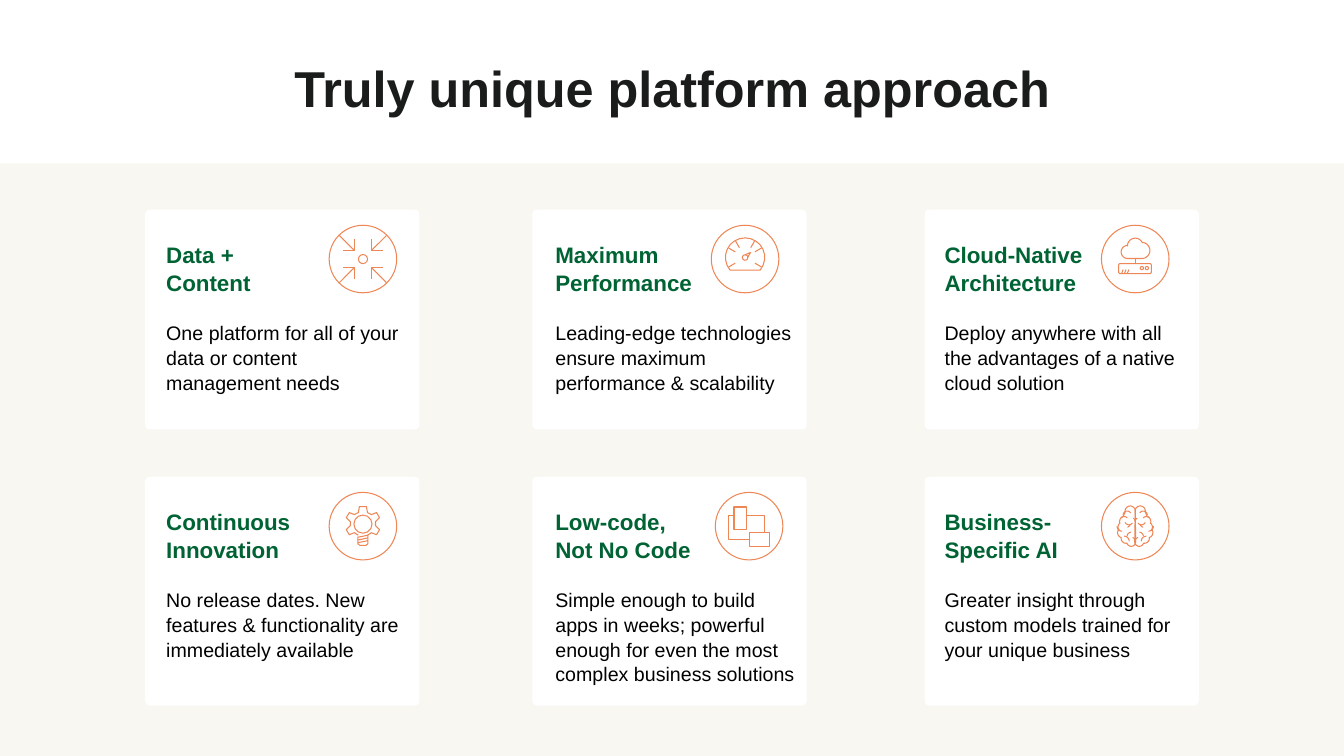
from math import cos, radians, sin

from pptx import Presentation
from pptx.dml.color import RGBColor
from pptx.enum.shapes import MSO_SHAPE
from pptx.enum.text import MSO_ANCHOR, PP_ALIGN
from pptx.util import Inches, Pt

RECT, ROUND, OVAL = MSO_SHAPE.RECTANGLE, MSO_SHAPE.ROUNDED_RECTANGLE, MSO_SHAPE.OVAL
MIDDLE, CENTER = MSO_ANCHOR.MIDDLE, PP_ALIGN.CENTER
WHITE, CREAM, ORANGE = "FFFFFF", "F8F7F2", "EE8655"
INK, GREEN, BLACK = "191C1A", "006334", "000000"


def paint(shape, fill=None, line=None):
    shape.shadow.inherit = False
    if fill:
        shape.fill.solid()
        shape.fill.fore_color.rgb = RGBColor.from_string(fill)
    else:
        shape.fill.background()
    if line:
        shape.line.color.rgb = RGBColor.from_string(line)
        shape.line.width = Pt(0.75)
    else:
        shape.line.fill.background()


def arc(x, y, radius, start, end):
    """Points along an arc, with angles in degrees clockwise from the right."""
    steps = 16
    angles = [radians(start + (end - start) * i / steps) for i in range(steps + 1)]
    return [(x + radius * cos(a), y + radius * sin(a)) for a in angles]


# Icons: strokes and (kind, left, top, width, height) parts,
# in thousandths of an inch from the centre of the ring.
arrows = []
for sx in (-1, 1):
    for sy in (-1, 1):
        arrows.append([(235 * sx, 235 * sy), (85 * sx, 85 * sy)])
        arrows.append([(85 * sx, 200 * sy), (85 * sx, 85 * sy), (200 * sx, 85 * sy)])
arrow_parts = [(OVAL, -45, -45, 90, 90)]

dial = arc(0, -15, 195, 140, 400)
gauge = [dial + dial[:1], [(25, -15), (55, -65), (0, -42)]]
for angle in (150, 210, 240, 300, 330, 390):
    gauge.append([(r * cos(radians(angle)), r * sin(radians(angle)) - 15) for r in (112, 188)])
gauge_parts = [(OVAL, -27, -42, 54, 54)]

outline = arc(-75, -70, 65, 90, 265) + arc(0, -130, 77, 180, 335) + arc(65, -85, 80, 280, 450)
cloud = [outline + outline[:1], [(0, -5), (0, 45)]]
cloud += [[(x, 105), (x - 15, 145)] for x in (-120, -92, -64)]
cloud_parts = [(ROUND, -165, 45, 325, 100), (OVAL, 49, 74, 32, 32), (OVAL, 99, 74, 32, 32)]

half_gear = [(-45, 90), (-85, 65), (-135, 85), (-165, 35), (-125, -5), (-125, -45),
             (-165, -85), (-135, -135), (-85, -115), (-45, -135), (-35, -195)]
bulb = [half_gear + [(-x, y) for x, y in reversed(half_gear)],
        [(-50, 105), (-50, 175), (-30, 190), (30, 190), (50, 175), (50, 90)]]
bulb += [[(-50, y), (50, y - 20)] for y in (110, 137, 164)]
bulb_parts = [(OVAL, -90, -110, 180, 180)]

window_parts = [(RECT, -200, -110, 350, 240), (RECT, -150, -190, 120, 220),
                (RECT, 0, 60, 200, 140)]

lobes = [(50, -150, 50, 180, 370), (100, -45, 55, -70, 20), (115, 10, 55, -45, 40),
         (125, 65, 50, -40, 70), (90, 120, 50, -10, 100), (40, 155, 45, 20, 175)]
folds = [(110, 150, 50, 180, 270), (40, 150, 40, 180, 250), (40, -45, 40, 180, 240),
         (40, 100, 40, 270, 360), (130, 0, 50, 0, 90), (110, -55, 40, 220, 320),
         (62, -55, 42, 25, 145), (85, -25, 36, 100, 160), (80, -110, 40, 210, 360)]
half_brain = [[point for lobe in lobes for point in arc(*lobe)] + [(0, -150)]]
half_brain += [arc(*fold) for fold in folds]
brain = half_brain + [[(-x, y) for x, y in stroke] for stroke in half_brain]

# Each card: heading, message, ring centre, icon strokes, icon parts
card_rows = [
    [("Data +\nContent",
      "One platform for all of your data or content management needs",
      3.6, arrows, arrow_parts),
     ("Maximum\nPerformance",
      "Leading-edge technologies ensure maximum performance & scalability",
      7.39, gauge, gauge_parts),
     ("Cloud-Native\nArchitecture",
      "Deploy anywhere with all the advantages of a native cloud solution",
      11.26, cloud, cloud_parts)],
    [("Continuous\nInnovation",
      "No release dates. New features & functionality are immediately available",
      3.6, bulb, bulb_parts),
     ("Low-code,\nNot No Code",
      "Simple enough to build\napps in weeks; powerful enough for even the most "
      "complex business solutions",
      7.43, [], window_parts),
     ("Business-\nSpecific AI",
      "Greater insight through custom models trained for your unique business",
      11.26, brain, [])],
]
columns = [(1.44, 1.55, 2.52), (5.28, 5.41, 2.65), (9.17, 9.27, 2.55)]
rows = [(2.08, 2.18), (4.73, 2.27)]
RING = 0.67

prs = Presentation()
prs.slide_width, prs.slide_height = Inches(13.33), Inches(7.5)
slide = prs.slides.add_slide(prs.slide_layouts[5])
shapes = slide.shapes

title = shapes.title
placement = {"left": 0.42, "top": 0.5, "width": 12.5, "height": 0.75}
for side, length in placement.items():
    setattr(title, side, Inches(length))
title.text_frame.text = "Truly unique platform approach"
title.text_frame.vertical_anchor = MIDDLE
title.text_frame.margin_bottom = 0
headline = title.text_frame.paragraphs[0]
headline.alignment, headline.line_spacing = CENTER, 0.9
title_format = {"name": "Arial", "size": Pt(36), "bold": True}
for attribute, value in title_format.items():
    setattr(headline.runs[0].font, attribute, value)
headline.runs[0].font.color.rgb = RGBColor.from_string(INK)

backdrop = shapes.add_shape(RECT, 0, Inches(1.62), prs.slide_width, Inches(5.88))
paint(backdrop, CREAM)

heading_format = {"name": "Arial", "size": Pt(16), "bold": True}
message_format = {"name": "Arial", "size": Pt(14), "bold": False}

for (top, height), cards in zip(rows, card_rows):
    for (left, text_left, text_width), card in zip(columns, cards):
        heading, message, ring_x, strokes, parts = card
        panel = shapes.add_shape(ROUND, Inches(left), Inches(top), Inches(2.72), Inches(height))
        panel.adjustments[0] = 0.021
        paint(panel, WHITE)

        copy_box = shapes.add_textbox(Inches(text_left), Inches(top + 0.25),
                                      Inches(text_width), Inches(1.58))
        frame = copy_box.text_frame
        frame.word_wrap = True
        heading_line, message_line = frame.paragraphs[0], frame.add_paragraph()
        message_line.space_before = Pt(17)
        for paragraph, text, font_format, color in (
                (heading_line, heading, heading_format, GREEN),
                (message_line, message, message_format, BLACK)):
            paragraph.text = text
            paragraph.line_spacing = 1.05
            for run in paragraph.runs:
                for attribute, value in font_format.items():
                    setattr(run.font, attribute, value)
                run.font.color.rgb = RGBColor.from_string(color)

        ring_y = top + 0.49
        ring = shapes.add_shape(OVAL, Inches(ring_x - RING / 2), Inches(ring_y - RING / 2),
                                Inches(RING), Inches(RING))
        paint(ring, line=ORANGE)
        for kind, x, y, part_width, part_height in parts:
            part = shapes.add_shape(kind, Inches(ring_x + x / 1000), Inches(ring_y + y / 1000),
                                    Inches(part_width / 1000), Inches(part_height / 1000))
            paint(part, WHITE, ORANGE)
        if strokes:
            pen = shapes.build_freeform(*strokes[0][0], scale=Inches(0.001))
            for stroke in strokes:
                pen.move_to(*stroke[0])
                pen.add_line_segments(stroke[1:], close=False)
            paint(pen.convert_to_shape(Inches(ring_x), Inches(ring_y)), line=ORANGE)

prs.save("out.pptx")
